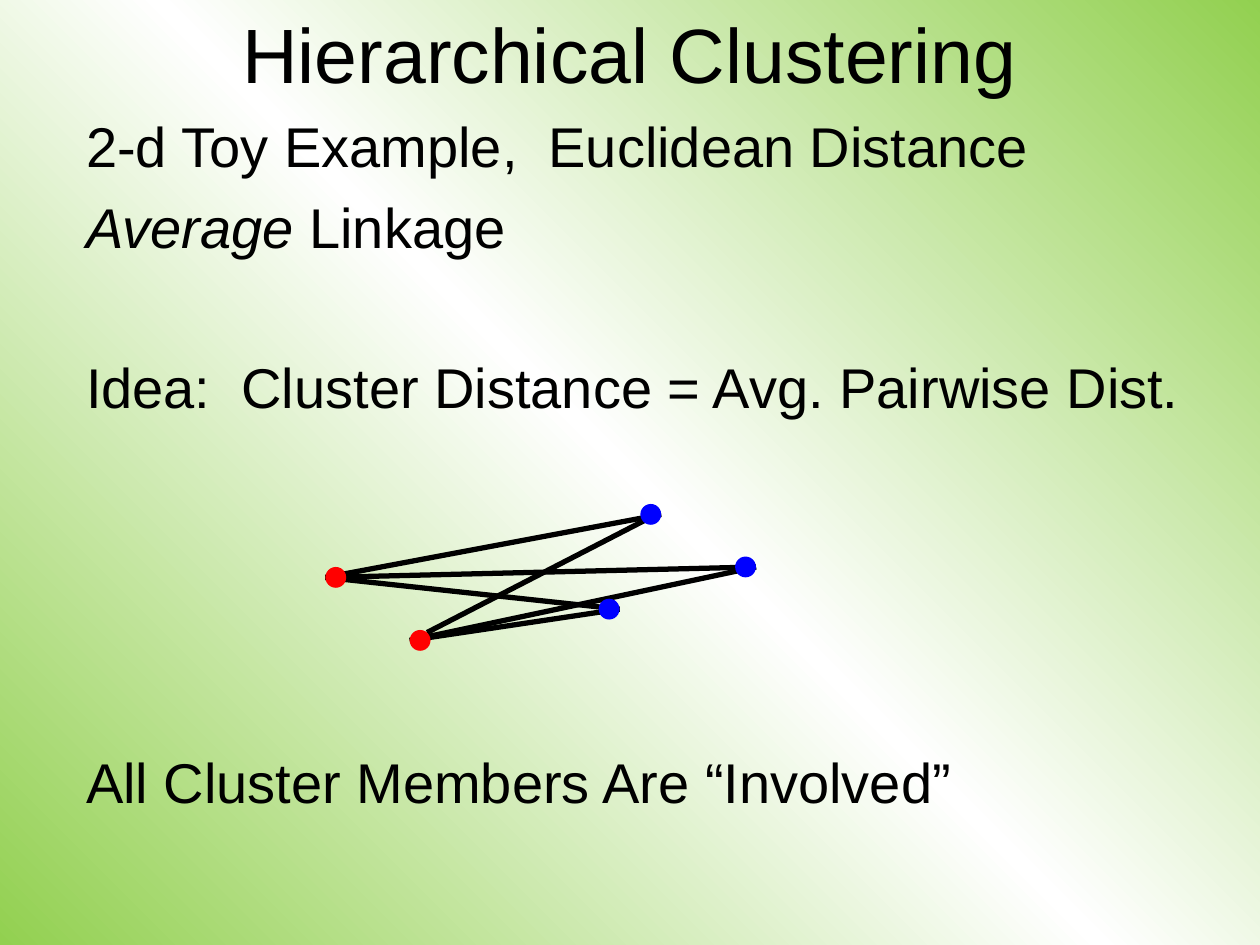
from copy import deepcopy
from dataclasses import dataclass
from itertools import product

from lxml import etree
from pptx import Presentation
from pptx import util as u
from pptx.dml.color import RGBColor
from pptx.enum import shapes, text
from pptx.oxml.ns import qn

COLORS = {"green": "92D050", "white": "FFFFFF", "black": "000000",
          "red": "FF0000", "blue": "0000FF"}
FONT = "Arial"
DOT_SIZE = 0.42
LINE_PITCH = 44.8
PARA_GAP = 8


@dataclass(frozen=True)
class Dot:
    left: float
    top: float
    color: str

    @property
    def middle(self) -> float:
        return self.top + DOT_SIZE / 2


@dataclass(frozen=True)
class Line:
    runs: tuple[tuple[str, bool], ...]
    skipped: int = 0


RED_CLUSTER = [Dot(6.56, 11.43, "red"), Dot(8.26, 12.7, "red")]
BLUE_CLUSTER = [Dot(12.91, 10.16, "blue"), Dot(12.07, 12.07, "blue"),
                Dot(14.82, 11.22, "blue")]
LINES = [
    Line((("2-d Toy Example,  Euclidean Distance", False),)),
    Line((("Average", True), (" Linkage", False))),
    Line((("Idea:  Cluster Distance = Avg. Pairwise Dist.", False),), 1),
    Line((("All Cluster Members Are “Involved”", False),), 4),
]


def rgb(name: str) -> RGBColor:
    return RGBColor.from_string(COLORS[name])


def paint_background(page) -> None:
    fill = page.background.fill
    fill.gradient()
    fill.gradient_angle = 225
    stops = page.element.find(".//" + qn("a:gsLst"))
    stops.insert(1, deepcopy(stops[0]))
    for stop, color, position in zip(fill.gradient_stops,
                                     ("green", "white", "green"), (0, 0.5, 1)):
        stop.color.rgb = rgb(color)
        stop.position = position


def place(box, left: float, top: float, width: float, height: float) -> None:
    box.left, box.top = u.Cm(left), u.Cm(top)
    box.width, box.height = u.Cm(width), u.Cm(height)
    box.text_frame.word_wrap = True
    box.text_frame.auto_size = text.MSO_AUTO_SIZE.NONE


def add_span(para, words: str, size: int, italic: bool = False) -> None:
    span = para.add_run()
    span.text = words
    span.font.name = FONT
    span.font.size = u.Pt(size)
    span.font.italic = italic
    span.font.color.rgb = rgb("black")


def write_title(page) -> None:
    box = page.shapes.title
    place(box, 1.9, 0.21, 21.59, 1.69)
    box.text_frame.vertical_anchor = text.MSO_ANCHOR.MIDDLE
    para = box.text_frame.paragraphs[0]
    para.alignment = text.PP_ALIGN.CENTER
    add_span(para, "Hierarchical Clustering", 44)


def write_body(page) -> None:
    box = page.placeholders[1]
    place(box, 1.48, 2.12, 23.5, 15.88)
    frame = box.text_frame
    for index, line in enumerate(LINES):
        para = frame.add_paragraph() if index else frame.paragraphs[0]
        para.space_before = u.Pt(PARA_GAP + line.skipped * LINE_PITCH)
        properties = para._p.get_or_add_pPr()
        properties.set("marL", "0")
        properties.set("indent", "0")
        etree.SubElement(properties, qn("a:buNone"))
        for words, italic in line.runs:
            add_span(para, words, 32, italic)


def draw_link(page, start: Dot, end: Dot) -> None:
    ends = (start.left, start.middle, end.left + DOT_SIZE, end.middle)
    if (start, end) == (RED_CLUSTER[1], BLUE_CLUSTER[0]):
        ends = (8.61, 12.75, 13.23, 10.37)
    link = page.shapes.add_connector(shapes.MSO_CONNECTOR.STRAIGHT,
                                     *(u.Cm(value) for value in ends))
    link.line.color.rgb = rgb("black")
    link.line.width = u.Pt(3)
    etree.SubElement(link._element.spPr, qn("a:effectLst"))


def draw_dot(page, dot: Dot) -> None:
    circle = page.shapes.add_shape(shapes.MSO_SHAPE.OVAL, u.Cm(dot.left), u.Cm(dot.top),
                                   u.Cm(DOT_SIZE), u.Cm(DOT_SIZE))
    circle.shadow.inherit = False
    circle.fill.solid()
    circle.fill.fore_color.rgb = rgb(dot.color)
    circle.line.fill.background()


def main() -> None:
    deck = Presentation()
    deck.slide_width, deck.slide_height = u.Cm(25.4), u.Cm(19.05)
    page = deck.slides.add_slide(deck.slide_layouts[1])
    paint_background(page)
    write_title(page)
    write_body(page)
    for start, end in product(RED_CLUSTER, BLUE_CLUSTER):
        draw_link(page, start, end)
    for dot in RED_CLUSTER + BLUE_CLUSTER:
        draw_dot(page, dot)
    deck.save("out.pptx")


if __name__ == "__main__":
    main()
